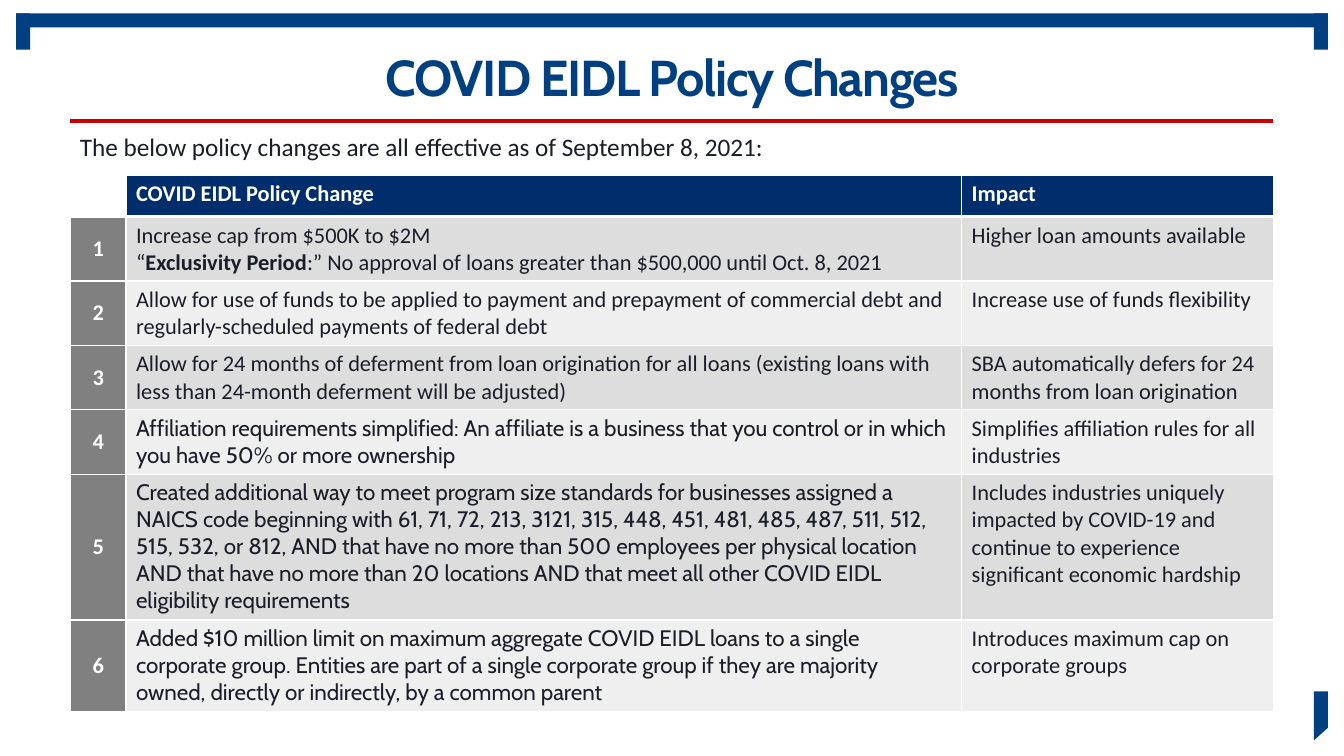
from copy import deepcopy
from dataclasses import dataclass

from lxml.etree import SubElement
from pptx import Presentation
from pptx.dml.color import RGBColor
from pptx.enum.shapes import MSO_CONNECTOR, MSO_SHAPE
from pptx.enum.text import MSO_ANCHOR, PP_ALIGN
from pptx.oxml import parse_xml
from pptx.oxml.ns import nsdecls, qn
from pptx.util import Inches, Pt


@dataclass(frozen=True)
class Theme:
    """Colours, fonts and type sizes of the slide."""
    frame: str = "003F80"
    header: str = "002E6D"
    rule: str = "CC0000"
    ink: str = "1B1E29"
    white: str = "FFFFFF"
    number: str = "808080"
    bands: tuple = ("DDDDDD", "EFEFEF")
    display: str = "Cabin"
    body: str = "Calibri"
    title_size: int = 36
    intro_size: int = 18
    table_size: int = 16


class PolicySlide:
    """Draws on one slide in units of a 96 by 54 grid."""

    def __init__(self, deck, theme):
        self.theme = theme
        self.slide = deck.slides.add_slide(deck.slide_layouts[6])
        self.shapes = self.slide.shapes
        self.unit = deck.slide_width / 96

    def grid(self, *lengths):
        return [round(length * self.unit) for length in lengths]

    def paint(self, shape, color):
        shape.shadow.inherit = False
        shape.fill.solid()
        shape.fill.fore_color.rgb = RGBColor.from_string(color)
        shape.line.fill.background()

    def bar(self, left, top, width, height):
        strip = self.shapes.add_shape(MSO_SHAPE.RECTANGLE, *self.grid(left, top, width, height))
        self.paint(strip, self.theme.frame)

    def outline(self, corners):
        start, *rest = [self.grid(*corner) for corner in corners]
        builder = self.shapes.build_freeform(*start)
        builder.add_line_segments(rest, close=True)
        self.paint(builder.convert_to_shape(), self.theme.frame)

    def rule(self, left, top, width):
        x1, y, x2 = self.grid(left, top, left + width)
        divider = self.shapes.add_connector(MSO_CONNECTOR.STRAIGHT, x1, y, x2, y)
        divider.line.color.rgb = RGBColor.from_string(self.theme.rule)
        divider.line.width = Pt(3)
        SubElement(divider._element.spPr, qn("a:effectLst"))

    def typeset(self, frame, words, font, size, color, bold=False):
        paragraph = frame.paragraphs[0]
        lead, *rest = words.split("**")
        paragraph.text = lead
        base_count = len(paragraph.runs)
        for part in rest:
            paragraph.add_run().text = part
        for index, run in enumerate(paragraph.runs):
            run.font.name = font
            run.font.size = Pt(size)
            run.font.bold = bold or (index >= base_count and (index - base_count) % 2 == 0)
            run.font.color.rgb = RGBColor.from_string(color)
        for line_break in paragraph._p.findall(qn("a:br")):
            line_break.insert(0, deepcopy(paragraph.runs[0]._r.rPr))
        return paragraph

    def text(self, place, words, font, size, color, bold=False):
        frame = self.shapes.add_textbox(*self.grid(*place)).text_frame
        frame.word_wrap = True
        return self.typeset(frame, words, font, size, color, bold)

    def title(self, place, words):
        theme = self.theme
        heading = self.text(place, words, theme.display, theme.title_size, theme.frame, True)
        heading.alignment = PP_ALIGN.CENTER
        heading.line_spacing = 0.9
        heading.runs[0]._r.rPr.set("spc", "-100")

    def cell(self, target, words, color, fill, font=None, bold=False, top=1, bottom=1):
        theme = self.theme
        if fill:
            target.fill.solid()
            target.fill.fore_color.rgb = RGBColor.from_string(fill)
        else:
            target.fill.background()
        edges = {"lnL": 1, "lnR": 1, "lnT": top, "lnB": bottom}
        for index, (edge, weight) in enumerate(edges.items()):
            target._tc.get_or_add_tcPr().insert(index, parse_xml(
                f'<a:{edge} {nsdecls("a")} w="{Pt(weight)}"><a:solidFill>'
                f'<a:srgbClr val="{theme.white}"/></a:solidFill></a:{edge}>'))
        return self.typeset(target.text_frame, words, font or theme.body,
                            theme.table_size, color, bold)

    def table(self, left, top, columns, header, changes):
        theme = self.theme
        heights = [2.95] + [0.72 + 1.94 * lines for lines, *_ in changes]
        place = self.grid(left, top, sum(columns), sum(heights))
        policy = self.shapes.add_table(len(heights), len(columns), *place).table
        for column, width in zip(policy.columns, self.grid(*columns)):
            column.width = width
        for row, height in zip(policy.rows, self.grid(*heights)):
            row.height = height
        for index, label in enumerate(header):
            self.cell(policy.cell(0, index), label, theme.white,
                      theme.header if label else None, bold=True, bottom=3)
        for number, (_, font, change, impact) in enumerate(changes, 1):
            top_edge = 3 if number == 1 else 1
            band = theme.bands[(number - 1) % 2]
            badge = policy.cell(number, 0)
            badge.vertical_anchor = MSO_ANCHOR.MIDDLE
            label = self.cell(badge, str(number), theme.white, theme.number,
                              bold=True, top=top_edge)
            label.alignment = PP_ALIGN.CENTER
            self.cell(policy.cell(number, 1), change, theme.ink, band, font, top=top_edge)
            self.cell(policy.cell(number, 2), impact, theme.ink, band, top=top_edge)


def main():
    deck = Presentation()
    deck.slide_width, deck.slide_height = Inches(13.33), Inches(7.5)
    theme = Theme()
    page = PolicySlide(deck, theme)
    edge, far, margin, span = 1.15, 94.85, 5, 85.9

    page.bar(edge, 0.95, far - edge, 1)
    for side in (edge, far - 1):
        page.bar(side, 0.95, 1, 2.6)
    page.outline([(far - 1, 49.4), (far, 49.4), (far, 52), (far - 1, 52.9)])

    page.title((6.6, 3.45, 82.8, 8.05), "COVID EIDL Policy Changes")
    page.rule(margin, 8.64, span)
    page.text((margin, 9, span, 2.9),
              "The below policy changes are all effective as of September 8, 2021:",
              theme.body, theme.intro_size, theme.ink)

    changes = [
        (2, theme.body,
         "Increase cap from $500K to $2M\v“**Exclusivity Period**:” No approval of loans "
         "greater than $500,000 until Oct. 8, 2021",
         "Higher loan amounts available"),
        (2, theme.body,
         "Allow for use of funds to be applied to payment and prepayment of commercial debt "
         "and regularly-scheduled payments of federal debt",
         "Increase use of funds flexibility"),
        (2, theme.body,
         "Allow for 24 months of deferment from loan origination for all loans (existing "
         "loans with less than 24-month deferment will be adjusted)",
         "SBA automatically defers for 24 months from loan origination"),
        (2, theme.display,
         "Affiliation requirements simplified: An affiliate is a business that you control "
         "or in which you have 50% or more ownership",
         "Simplifies affiliation rules for all industries"),
        (5, theme.display,
         "Created additional way to meet program size standards for businesses assigned a "
         "NAICS code beginning with 61, 71, 72, 213, 3121, 315, 448, 451, 481, 485, 487, "
         "511, 512, 515, 532, or 812, AND that have no more than 500 employees per physical "
         "location AND that have no more than 20 locations AND that meet all other COVID "
         "EIDL eligibility requirements",
         "Includes industries uniquely impacted by COVID-19 and continue to experience "
         "significant economic hardship"),
        (3, theme.display,
         "Added $10 million limit on maximum aggregate COVID EIDL loans to a single "
         "corporate group. Entities are part of a single corporate group if they are "
         "majority owned, directly or indirectly, by a common parent",
         "Introduces maximum cap on corporate groups"),
    ]
    page.table(margin + 0.04, 12.53, (3.96, 59.69, 22.25),
               ("", "COVID EIDL Policy Change", "Impact"), changes)
    deck.save("out.pptx")


if __name__ == "__main__":
    main()
